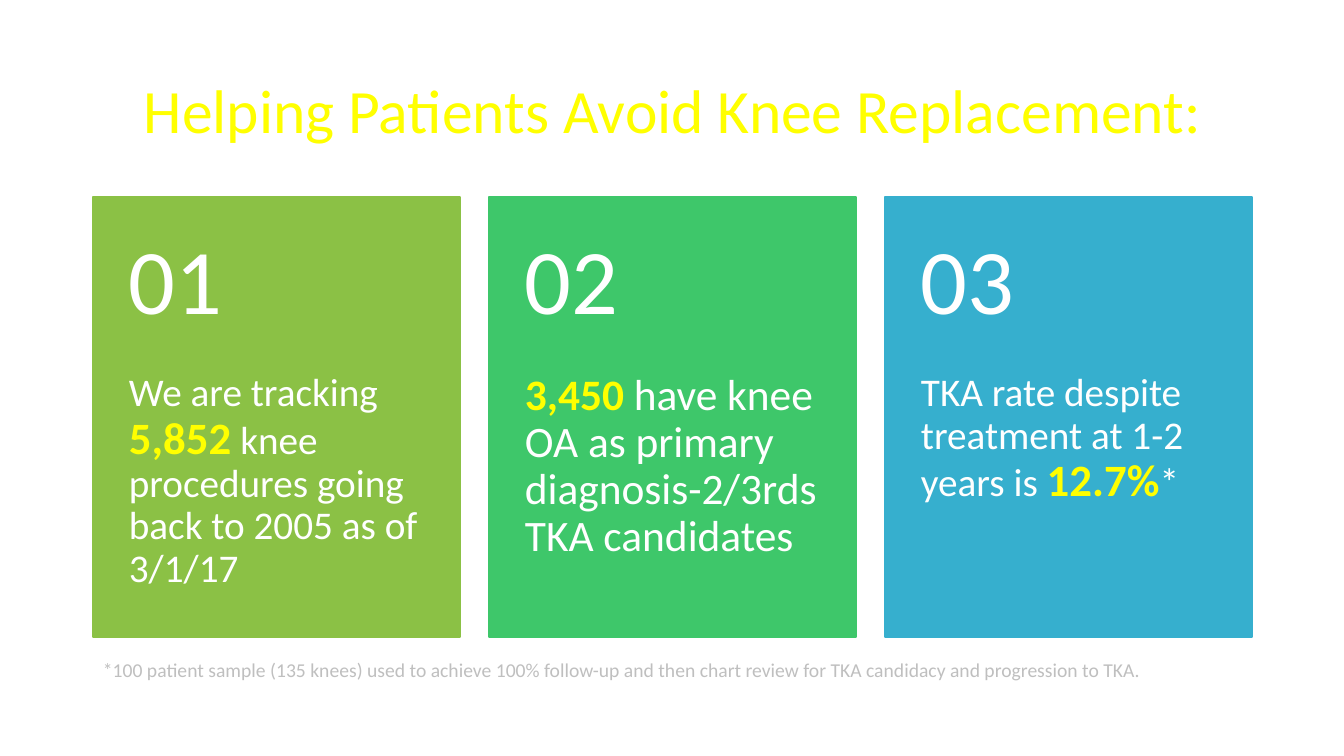
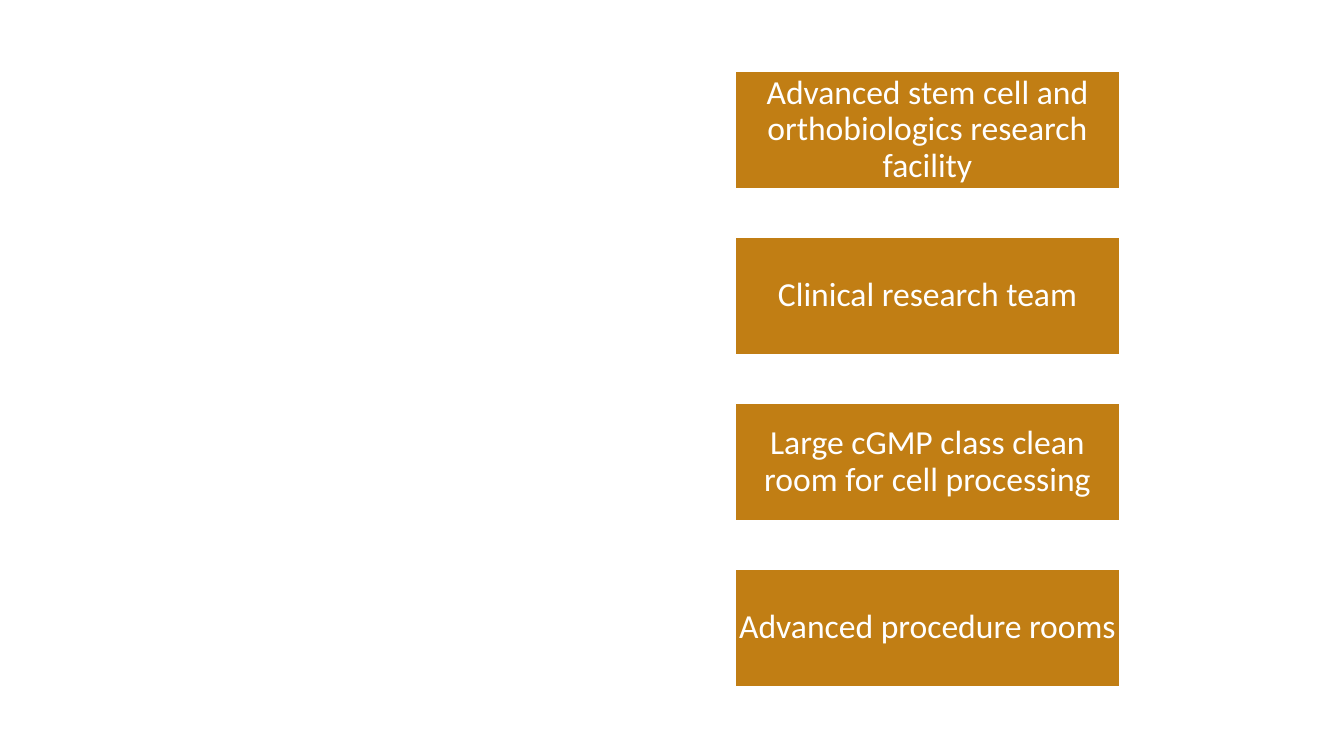
from pptx import Presentation
from pptx.dml.color import RGBColor
from pptx.enum.shapes import MSO_SHAPE as Shape
from pptx.enum.text import MSO_ANCHOR as Anchor, PP_ALIGN as Align
from pptx.util import Emu, Pt

COLORS = {
    "background": "FFFFFF",
    "white": "FFFFFF",
    "highlight": "FFFF00",
    "footnote": "BFBFBF",
    "lime": "8BC145",
    "green": "3EC76A",
    "blue": "36AFCE",
    "ochre": "C17E14",
}
FONT = "Calibri"
EMU_PER_PX = 914400 / 100.8
SLIDE_W, SLIDE_H = 1344, 756
MARGIN = 93


def px(length):
    return Emu(round(length * EMU_PER_PX))


def color(name):
    return RGBColor.from_string(COLORS[name])


class Deck:
    """Holds the shared style and the current slide."""

    def __init__(self):
        self.prs = Presentation()
        self.prs.slide_width, self.prs.slide_height = px(SLIDE_W), px(SLIDE_H)
        self.slide = None

    def new_slide(self):
        self.slide = self.prs.slides.add_slide(self.prs.slide_layouts[6])
        fill = self.slide.background.fill
        fill.solid()
        fill.fore_color.rgb = color("background")

    def set_text(self, shape, runs, insets=(10, 5, 10, 5), anchor=Anchor.TOP,
                 align=Align.LEFT, spacing=0.9):
        """Fill a shape with runs given as (text, size, color, bold)."""
        frame = shape.text_frame
        frame.word_wrap = True
        frame.vertical_anchor = anchor
        (frame.margin_left, frame.margin_top,
         frame.margin_right, frame.margin_bottom) = map(px, insets)
        paragraph = frame.paragraphs[0]
        paragraph.alignment = align
        paragraph.line_spacing = spacing
        for text, size, color_name, bold in runs:
            run = paragraph.add_run()
            run.text = text
            font = run.font
            font.name, font.size, font.bold = FONT, Pt(size), bold
            font.color.rgb = color(color_name)

    def text(self, box, runs, **style):
        text_box = self.slide.shapes.add_textbox(*map(px, box))
        self.set_text(text_box, runs, **style)

    def panel(self, box, fill, line, line_width):
        panel = self.slide.shapes.add_shape(Shape.RECTANGLE, *map(px, box))
        panel.shadow.inherit = False
        panel.fill.solid()
        panel.fill.fore_color.rgb = color(fill)
        panel.line.color.rgb = color(line)
        panel.line.width = Pt(line_width)
        return panel

    def title(self, text):
        self.text((MARGIN, 41, 1160, 146), [(text, 44, "highlight", False)],
                  anchor=Anchor.MIDDLE, align=Align.CENTER)

    def footnote(self, text):
        self.text((MARGIN, 653, 1189, 34), [(text, 14, "footnote", False)],
                  spacing=1.0)

    def number_card(self, left, number, fill, body):
        top, width, height, number_height = 197, 367, 440, 176
        self.panel((left, top, width, height), fill, fill, 1)
        self.text((left, top + number_height, width, height - number_height),
                  body, insets=(36, 0, 36, 36))
        self.text((left, top, width, number_height),
                  [(f"{number:02}", 66, "white", False)],
                  insets=(36, 18, 36, 18), anchor=Anchor.MIDDLE)

    def label_box(self, top, label):
        box = self.panel((735, top, 385, 118), "ochre", "white", 1.5)
        self.set_text(box, [(label, 24, "white", False)], insets=(2, 2, 2, 2),
                      anchor=Anchor.MIDDLE, align=Align.CENTER)


def knee_results(deck):
    deck.new_slide()
    deck.title("Helping Patients Avoid Knee Replacement:")

    # Three numbered findings
    findings = [
        ("lime", [("We are tracking ", 28, "white", False),
                  ("5,852", 32, "highlight", True),
                  (" knee procedures going back to 2005 as of 3/1/17",
                   28, "white", False)]),
        ("green", [("3,450", 31, "highlight", True),
                   (" have knee OA as primary diagnosis-2/3rds TKA candidates",
                    31, "white", False)]),
        ("blue", [("TKA rate despite treatment at 1-2 years is ",
                   28, "white", False),
                  ("12.7%", 32, "highlight", True),
                  ("*", 28, "white", False)]),
    ]
    card_pitch = 396
    for i, (fill, body) in enumerate(findings):
        deck.number_card(MARGIN + i * card_pitch, i + 1, fill, body)

    deck.footnote("*100 patient sample (135 knees) used to achieve 100% "
                  "follow-up and then chart review for TKA candidacy and "
                  "progression to TKA.")


def research_facility(deck):
    deck.new_slide()

    # Column of facility features
    features = [
        "Advanced stem cell and orthobiologics research facility",
        "Clinical research team",
        "Large cGMP class clean room for cell processing",
        "Advanced procedure rooms",
    ]
    first_top, feature_pitch = 71, 166
    for i, feature in enumerate(features):
        deck.label_box(first_top + i * feature_pitch, feature)


def main():
    deck = Deck()
    knee_results(deck)
    research_facility(deck)
    deck.prs.save("out.pptx")


if __name__ == "__main__":
    main()
